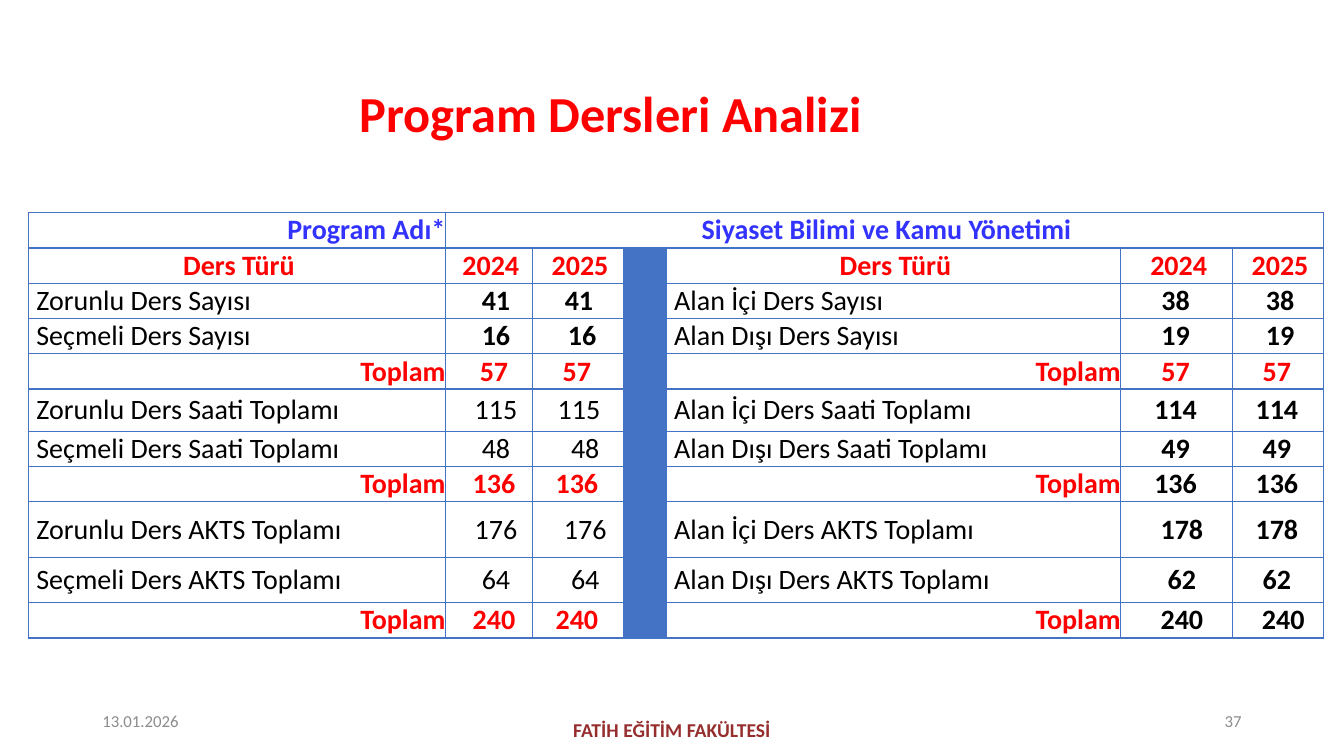
from lxml import etree
from pptx import Presentation
from pptx.dml.color import RGBColor
from pptx.enum import text
from pptx.oxml import ns
from pptx.util import Pt

FONT = "Calibri"
RED, BLUE, BLACK, GRAY = "FF0000", "3333FF", "000000", "8C8C8C"
WHITE, GRID = "FFFFFF", "4472C4"
LEFT, CENTER, RIGHT = text.PP_ALIGN.LEFT, text.PP_ALIGN.CENTER, text.PP_ALIGN.RIGHT

COLUMNS = [298, 62, 65.5, 30.2, 324.7, 80, 64.8]
ROWS = [25.2] * 5 + [30.2] + [25.2] * 2 + [39.6, 32.4, 25.2]
DIVIDER = 3
SMALL, LARGE = 2.88, 5.76  # cell indents
NUDGE = 4.5  # extra room on one side of a number

# Label, 2024, 2025 for each half; ">" pushes a number right, "<" left
COURSES = [
    ("Zorunlu Ders Sayısı", ">41", "41<", "Alan İçi Ders Sayısı", "38<", "38"),
    ("Seçmeli Ders Sayısı", ">16", "16", "Alan Dışı Ders Sayısı", "19<", "19"),
    ("Toplam", ">57", "57<", "Toplam", "57<", "57<"),
    ("Zorunlu Ders Saati Toplamı", ">115", "115<", "Alan İçi Ders Saati Toplamı", "114<", "114<"),
    ("Seçmeli Ders Saati Toplamı", ">48", ">48", "Alan Dışı Ders Saati Toplamı", "49<", "49<"),
    ("Toplam", ">136", "136<", "Toplam", "136<", "136<"),
    ("Zorunlu Ders AKTS Toplamı", ">176", ">176", "Alan İçi Ders AKTS Toplamı", ">178", "178<"),
    ("Seçmeli Ders AKTS Toplamı", ">64", ">64", "Alan Dışı Ders AKTS Toplamı", ">62", "62<"),
    ("Toplam", ">240", "240<", "Toplam", ">240", ">240"),
]


def color(value):
    return RGBColor.from_string(value)


def add_run(para, words, size, ink, bold=False):
    span = para.add_run()
    span.text = words
    span.font.name, span.font.size, span.font.bold = FONT, Pt(size), bold
    span.font.color.rgb = color(ink)


def add_label(page, bounds, words, size, ink, bold=False, align=LEFT, spacing=None):
    frame = page.shapes.add_textbox(*[Pt(length) for length in bounds]).text_frame
    frame.word_wrap = True
    frame.vertical_anchor = text.MSO_ANCHOR.MIDDLE
    para = frame.paragraphs[0]
    para.alignment, para.line_spacing = align, spacing
    add_run(para, words, size, ink, bold)


def style_cell(cell, fill):
    properties = cell._tc.get_or_add_tcPr()
    for side in ("a:lnL", "a:lnR", "a:lnT", "a:lnB"):
        line = etree.SubElement(properties, ns.qn(side), w=str(Pt(1)))
        solid = etree.SubElement(line, ns.qn("a:solidFill"))
        etree.SubElement(solid, ns.qn("a:srgbClr"), val=GRID)
    cell.fill.solid()
    cell.fill.fore_color.rgb = color(fill)
    cell.margin_left = cell.margin_right = cell.margin_top = cell.margin_bottom = 0
    cell.vertical_anchor = text.MSO_ANCHOR.MIDDLE


def write_cell(cell, words, ink, bold, align=CENTER, indent=SMALL):
    cell.margin_left = Pt(indent + NUDGE * words.startswith(">"))
    cell.margin_right = Pt(NUDGE * words.endswith("<"))
    para = cell.text_frame.paragraphs[0]
    para.alignment = align
    add_run(para, words.strip("<>"), 20, ink, bold)


def write_courses(table, row, entries):
    total = entries[0] == "Toplam"
    counts = row <= 4
    for index, words in enumerate(entries):
        right_half = index >= DIVIDER
        column = index + right_half
        number = index % 3 > 0
        if number:
            align, indent = CENTER, SMALL if right_half or total else LARGE
        else:
            align, indent = (RIGHT, SMALL) if total else (LEFT, LARGE)
        red = total and (counts or not (right_half and number))
        bold = total or (number and (right_half or counts))
        write_cell(table.cell(row, column), words, RED if red else BLACK, bold, align, indent)


def add_course_table(page):
    frame = page.shapes.add_table(len(ROWS), len(COLUMNS), Pt(20.2), Pt(151.9),
                                  Pt(sum(COLUMNS)), Pt(sum(ROWS)))
    table = frame.table
    table.first_row = table.horz_banding = False
    for column, width in zip(table.columns, COLUMNS):
        column.width = Pt(width)
    for index, height in enumerate(ROWS):
        table.rows[index].height = Pt(height)
        for column in range(len(COLUMNS)):
            style_cell(table.cell(index, column), GRID if index and column == DIVIDER else WHITE)

    # Program row
    table.cell(0, 1).merge(table.cell(0, len(COLUMNS) - 1))
    write_cell(table.cell(0, 0), "Program Adı*", BLUE, True, RIGHT)
    write_cell(table.cell(0, 1), "Siyaset Bilimi ve Kamu Yönetimi", BLUE, True)

    # Headings of both halves
    for start in (0, DIVIDER + 1):
        for offset, words in enumerate(("Ders Türü", "2024", "2025")):
            write_cell(table.cell(1, start + offset), words, RED, True)

    # Courses and totals
    for row, entries in enumerate(COURSES, start=2):
        write_courses(table, row, entries)


def main():
    deck = Presentation()
    deck.slide_width, deck.slide_height = Pt(960), Pt(540)
    page = deck.slides.add_slide(deck.slide_layouts[6])

    # Footer and title
    add_label(page, (318, 507, 324, 28.8), "FATİH EĞİTİM FAKÜLTESİ", 14, "962E2E", True, CENTER)
    add_label(page, (29.5, 59, 813.6, 48.2), "Program Dersleri Analizi", 36, RED, True, CENTER, 0.9)

    # Date and page number
    add_label(page, (66, 500.5, 216, 28.8), "13.01.2026", 12, GRAY)
    add_label(page, (678, 500.5, 216, 28.8), "37", 12, GRAY, align=RIGHT)

    add_course_table(page)
    deck.save("out.pptx")


if __name__ == "__main__":
    main()
